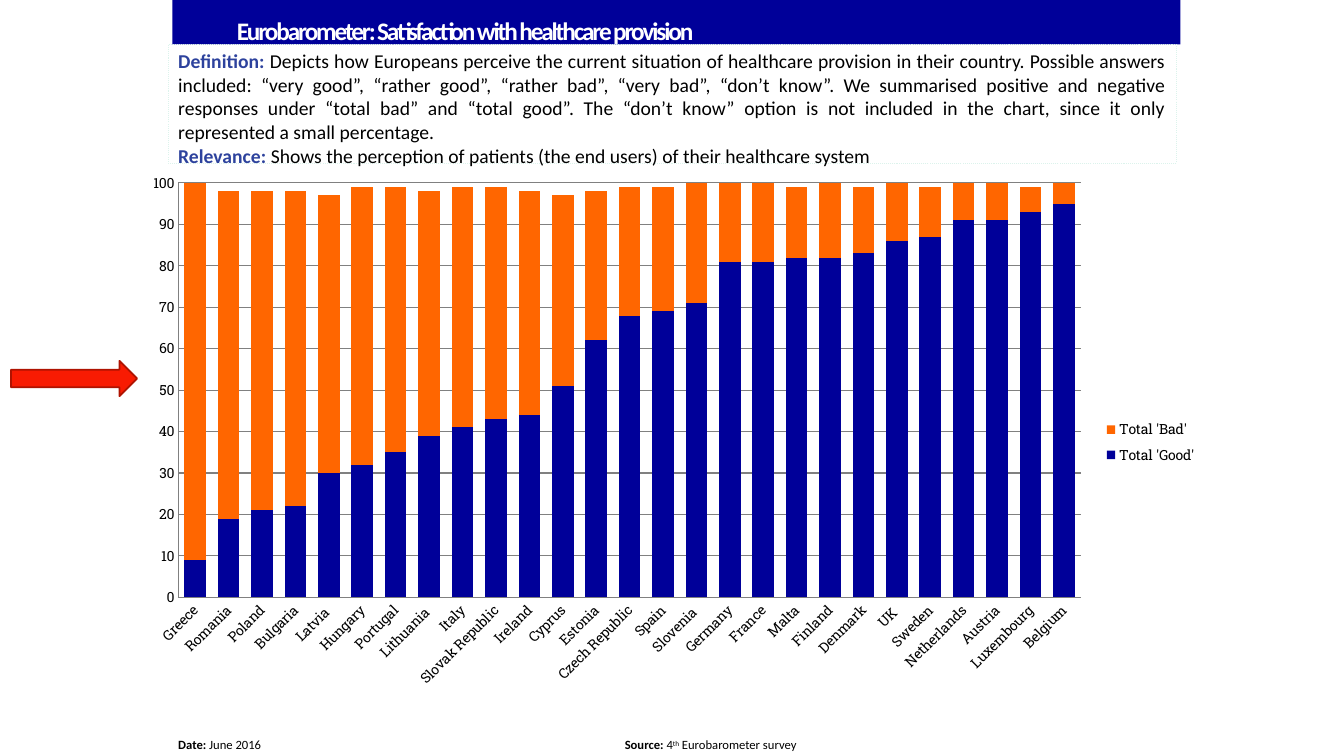
import pptx
import pptx.chart.data
import pptx.dml.color
import pptx.enum.chart
import pptx.enum.dml
import pptx.enum.shapes
import pptx.enum.text
import pptx.oxml
import pptx.oxml.ns
import pptx.util
from lxml import etree

Inches, Pt = pptx.util.Inches, pptx.util.Pt
SHAPE = pptx.enum.shapes.MSO_SHAPE
ALIGN = pptx.enum.text.PP_ALIGN
ANCHOR = pptx.enum.text.MSO_ANCHOR
qn = pptx.oxml.ns.qn

NAVY, ORANGE, GRID = "000099", "FF6600", "808080"
BLACK, WHITE, LABEL_BLUE = "000000", "FFFFFF", "2D429D"

# country: (total good, total bad)
SATISFACTION = {
    "Greece": (9, 91), "Romania": (19, 79), "Poland": (21, 77),
    "Bulgaria": (22, 76), "Latvia ": (30, 67), "Hungary": (32, 67),
    "Portugal": (35, 64), "Lithuania ": (39, 59), "Italy": (41, 58),
    "Slovak Republic": (43, 56), "Ireland": (44, 54), "Cyprus": (51, 46),
    "Estonia": (62, 36), "Czech Republic": (68, 31), "Spain": (69, 30),
    "Slovenia ": (71, 29), "Germany": (81, 19), "France": (81, 19),
    "Malta": (82, 17), "Finland": (82, 18), "Denmark": (83, 16),
    "UK ": (86, 14), "Sweden": (87, 12), "Netherlands": (91, 9),
    "Austria": (91, 9), "Luxembourg": (93, 6), "Belgium": (95, 5),
}
DEFINITION = (
    "Depicts how Europeans perceive the current situation of healthcare provision "
    "in their country. Possible answers included: “very good”, “rather good”, "
    "“rather bad”, “very bad”, “don’t know”. We summarised positive and negative "
    "responses under “total bad” and “total good”. The “don’t know” option is not "
    "included in the chart, since it only represented a small percentage. "
)
RELEVANCE = "Shows the perception of patients (the end users) of their healthcare system"


def rgb(value):
    return pptx.dml.color.RGBColor.from_string(value)


class SlideBuilder:
    text_font = "Calibri"
    chart_font = "Roboto Slab"

    def __init__(self, slide):
        self.s = slide

    def shape(self, kind, box, fill=None, line=None, width=0.75, dash=None):
        sp = self.s.shapes.add_shape(kind, *map(Inches, box))
        sp.shadow.inherit = False
        if fill:
            sp.fill.solid()
            sp.fill.fore_color.rgb = rgb(fill)
        else:
            sp.fill.background()
        if line:
            sp.line.color.rgb = rgb(line)
            sp.line.width = Pt(width)
            sp.line.dash_style = dash
        else:
            sp.line.fill.background()
        return sp

    def text_box(self, box):
        return self.s.shapes.add_textbox(*map(Inches, box))

    def frame(self, sp):
        tf = sp.text_frame
        tf.word_wrap = True
        tf.vertical_anchor = ANCHOR.TOP
        return tf

    def run(self, p, text, size, color=BLACK, bold=False):
        r = p.add_run()
        r.text = text
        r.font.name = self.text_font
        r.font.size = Pt(size)
        r.font.bold = bold
        r.font.color.rgb = rgb(color)
        return r

    def stacked_chart(self, box, categories, series):
        """Draw stacked columns; series holds (name, values, colour)."""
        data = pptx.chart.data.CategoryChartData()
        data.categories = categories
        for name, values, _ in series:
            data.add_series(name, values)
        kind = pptx.enum.chart.XL_CHART_TYPE.COLUMN_STACKED
        chart = self.s.shapes.add_chart(kind, *map(Inches, box), data).chart
        chart.has_title = False
        chart.font.name = self.chart_font
        chart.font.size = Pt(10)
        chart.font.color.rgb = rgb(BLACK)
        chart.has_legend = True
        chart.legend.position = pptx.enum.chart.XL_LEGEND_POSITION.RIGHT
        chart.legend.include_in_layout = False
        plot = chart.plots[0]
        plot.gap_width, plot.overlap, plot.vary_by_categories = 55, 100, False
        for ser, (_, _, color) in zip(plot.series, series):
            ser.format.fill.solid()
            ser.format.fill.fore_color.rgb = rgb(color)
        for axis in (chart.category_axis, chart.value_axis):
            axis.major_tick_mark = pptx.enum.chart.XL_TICK_MARK.NONE
            axis.format.line.color.rgb = rgb(GRID)
        value_axis = chart.value_axis
        value_axis.minimum_scale, value_axis.maximum_scale = 0, 100
        value_axis.major_unit = 10
        value_axis.major_gridlines.format.line.color.rgb = rgb(GRID)
        chart.category_axis.tick_labels.font.size = Pt(10)
        body = chart.category_axis._element.find(qn("c:txPr")).find(qn("a:bodyPr"))
        body.set("rot", "-2700000")
        area = chart._chartSpace.find(qn("c:chart")).find(qn("c:plotArea"))
        self.place(area, 0, layoutTarget="inner", xMode="edge", yMode="edge",
                   x=0.06, y=0.032, w=0.813, h=0.749)
        self.place(chart.legend._element, 1, xMode="edge", yMode="edge",
                   x=0.886, y=0.449, w=0.1, h=0.103)

    def place(self, part, index, **settings):
        """Fix a chart part at fractions of the chart."""
        for old in part.findall(qn("c:layout")):
            part.remove(old)
        layout = pptx.oxml.parse_xml(f'<c:layout {pptx.oxml.ns.nsdecls("c")}/>')
        manual = etree.SubElement(layout, qn("c:manualLayout"))
        for tag, value in settings.items():
            etree.SubElement(manual, qn(f"c:{tag}")).set("val", str(value))
        part.insert(index, layout)


def main():
    prs = pptx.Presentation()
    prs.slide_height = Inches(7.5)
    prs.slide_width = prs.slide_height * 16 // 9
    b = SlideBuilder(prs.slides.add_slide(prs.slide_layouts[6]))

    title = b.shape(SHAPE.RECTANGLE, (1.71, -0.03, 10, 0.47), fill=NAVY)
    tf = b.frame(title)
    tf.margin_left, tf.margin_top, tf.margin_bottom = Inches(0.64), Inches(0.23), 0
    p = tf.paragraphs[0]
    p.alignment, p.line_spacing = ALIGN.LEFT, 0.85
    r = b.run(p, "Eurobarometer: Satisfaction with healthcare provision", 18, WHITE, True)
    r.font._element.set("spc", "-150")

    summary = b.shape(SHAPE.RECTANGLE, (1.67, 0.44, 10, 1.18), line="DCF3EC",
                      dash=pptx.enum.dml.MSO_LINE.ROUND_DOT)
    tf = b.frame(summary)
    for i, (label, text) in enumerate((("Definition: ", DEFINITION),
                                       ("Relevance: ", RELEVANCE))):
        p = tf.add_paragraph() if i else tf.paragraphs[0]
        p.alignment = ALIGN.JUSTIFY
        b.run(p, label, 14, LABEL_BLUE, True)
        b.run(p, text, 14)

    footer = b.text_box((1.67, 7.14, 10, 0.36))
    p = b.frame(footer).paragraphs[0]
    tabs = etree.SubElement(p._p.get_or_add_pPr(), qn("a:tabLst"))
    etree.SubElement(tabs, qn("a:tab"), pos=str(Inches(4.43)), algn="l")
    b.run(p, "Date: ", 9, bold=True)
    b.run(p, "June 2016", 9)
    b.run(p, "\t", 18)
    b.run(p, "Source: ", 9, bold=True)
    b.run(p, "4", 9)
    b.run(p, "th", 9).font._element.set("baseline", "30000")
    b.run(p, " Eurobarometer survey", 9)

    good, bad = zip(*SATISFACTION.values())
    b.stacked_chart((1.11, 1.64, 11.01, 5.49), list(SATISFACTION),
                    (("Total 'Good'", good, NAVY), ("Total 'Bad'", bad, ORANGE)))

    b.shape(SHAPE.RIGHT_ARROW, (0.11, 3.58, 1.25, 0.35), "F81B02", "AF1301", 1.25)
    prs.save("out.pptx")


if __name__ == "__main__":
    main()
